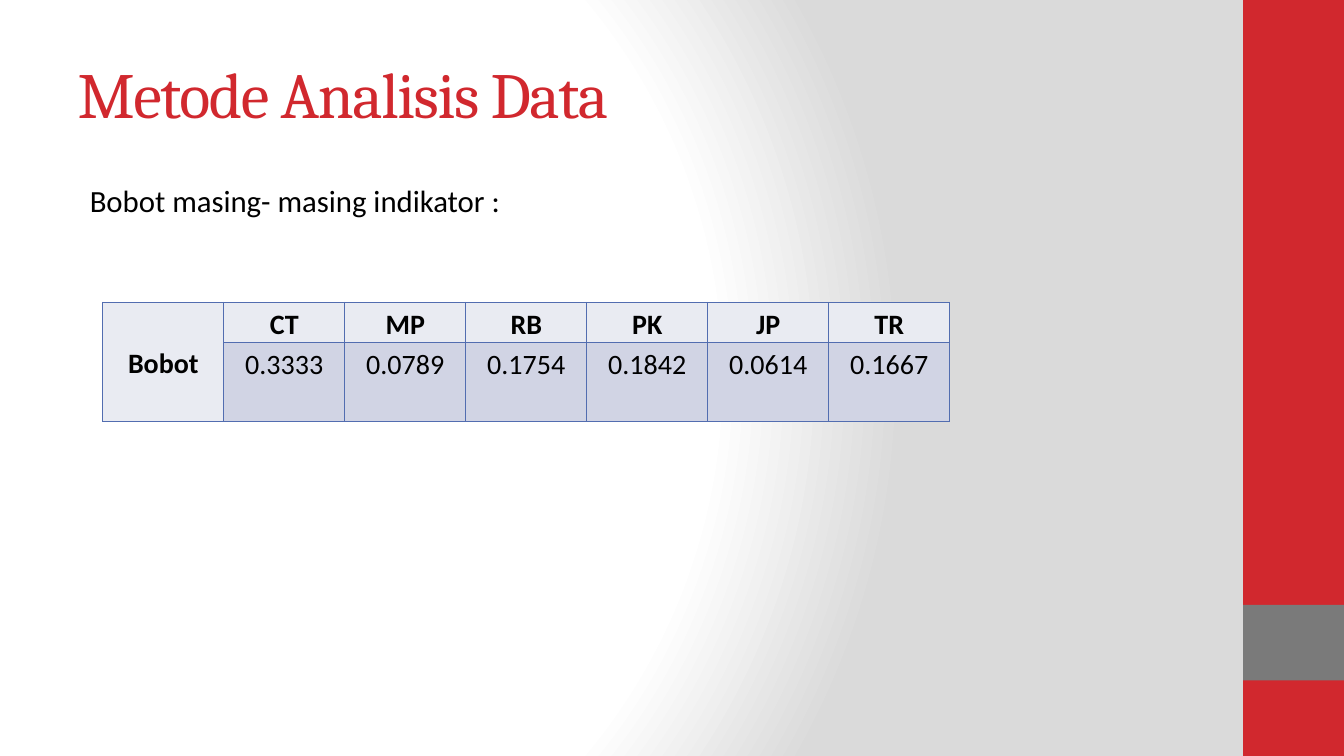
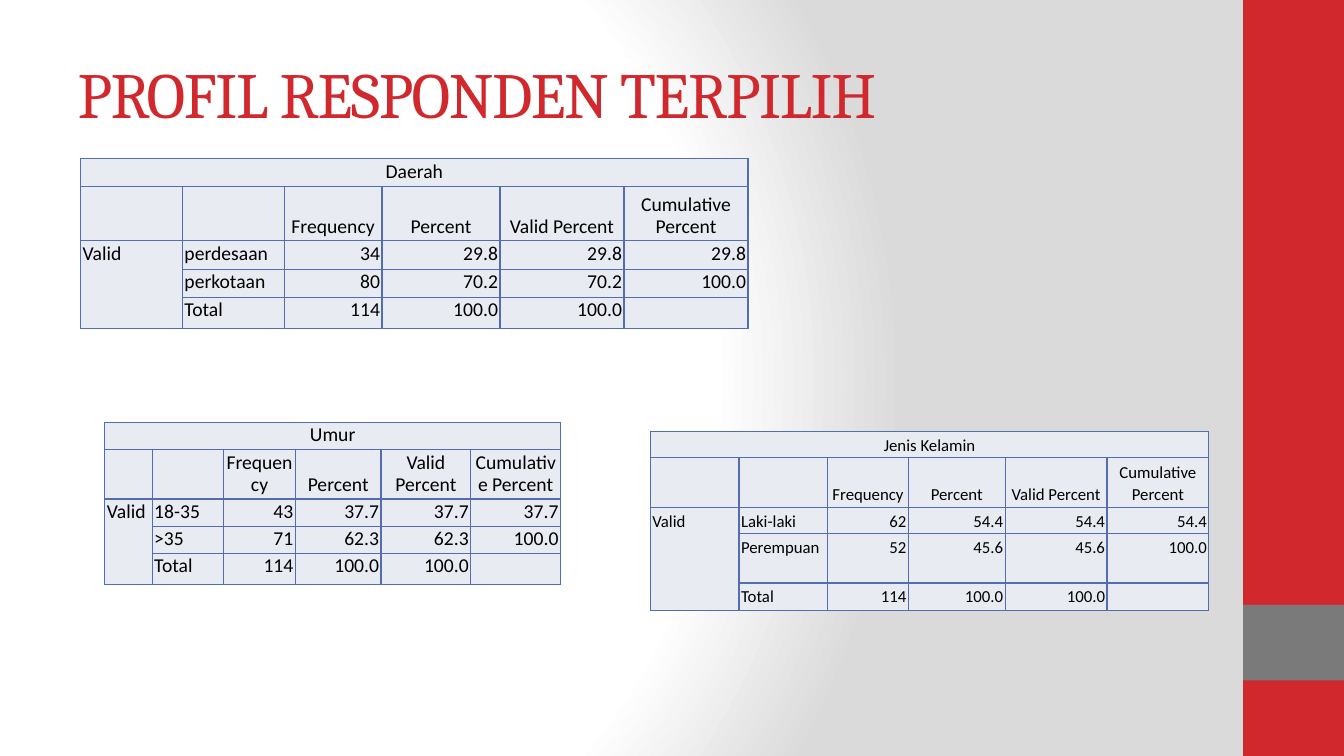
from lxml.etree import SubElement
from pptx import Presentation
from pptx.dml.color import RGBColor
from pptx.enum.shapes import MSO_SHAPE
from pptx.enum.text import MSO_ANCHOR, MSO_AUTO_SIZE, PP_ALIGN
from pptx.oxml import parse_xml
from pptx.oxml.ns import nsdecls, qn
from pptx.util import Inches, Pt

# Shared look
RED, GREY, BLACK = "D1282E", "7A7A7A", "000000"
PALE, DEEP, EDGE = "E9EBF2", "D1D4E4", "526DB0"
HEAD, BODY = "Cambria", "Calibri"
LEFT, CENTER, RIGHT = PP_ALIGN.LEFT, PP_ALIGN.CENTER, PP_ALIGN.RIGHT
TOP, MIDDLE, BOTTOM = MSO_ANCHOR.TOP, MSO_ANCHOR.MIDDLE, MSO_ANCHOR.BOTTOM
STOPS = [(0, "FFFFFF"), (75, "FFFFFF"), (100, "DADADA")]
COLUMNS = ["", "", "Frequency", "Percent", "Valid Percent", "Cumulative Percent"]


def paint(fill, color):
    fill.solid()
    fill.fore_color.rgb = RGBColor.from_string(color)


def style(para, size, font=BODY, color=BLACK, bold=False):
    for run in para.runs:
        run.font.size = Pt(size)
        run.font.name = font
        run.font.bold = bold
        run.font.color.rgb = RGBColor.from_string(color)


# Slide frame
def set_back(master):
    fill = master.background.fill
    fill.solid()
    stops = "".join(
        f'<a:gs pos="{pos * 1000}"><a:srgbClr val="{color}"/></a:gs>'
        for pos, color in STOPS)
    grad = parse_xml(
        f'<a:gradFill {nsdecls("a")} rotWithShape="1"><a:gsLst>{stops}</a:gsLst>'
        '<a:path path="circle"><a:fillToRect l="20000" t="50000" r="100000"'
        ' b="50000"/></a:path></a:gradFill>')
    solid = next(master.element.iter(qn("a:solidFill")))
    solid.getparent().replace(solid, grad)


def add_band(slide, top, height, color):
    band = slide.shapes.add_shape(
        MSO_SHAPE.RECTANGLE, Inches(12.33), Inches(top), Inches(1), Inches(height))
    band.shadow.inherit = False
    paint(band.fill, color)
    band.line.fill.background()


def add_page(deck, text):
    slide = deck.slides.add_slide(deck.slide_layouts[5])
    add_band(slide, 0, 7.5, RED)
    add_band(slide, 6, 0.75, GREY)
    title = slide.shapes.title
    title.left, title.top = Inches(0.67), Inches(0.3)
    title.width, title.height = Inches(11.11), Inches(1.25)
    frame = title.text_frame
    frame.text = text
    frame.auto_size = MSO_AUTO_SIZE.NONE
    frame.vertical_anchor = MIDDLE
    para = frame.paragraphs[0]
    para.alignment = LEFT
    style(para, 46, HEAD, RED)
    para.runs[0].font._element.set("spc", "-100")
    return slide


def add_note(slide, text):
    box = slide.shapes.add_textbox(
        Inches(0.67), Inches(1.75), Inches(11.11), Inches(0.5))
    frame = box.text_frame
    frame.word_wrap = True
    frame.margin_left = Inches(0.22)
    frame.text = text
    style(frame.paragraphs[0], 22)


# Tables
def add_edges(cell):
    props = cell._tc.get_or_add_tcPr()
    for spot, side in enumerate("LRTB"):
        props.insert(spot, parse_xml(
            f'<a:ln{side} {nsdecls("a")} w="12700"><a:solidFill>'
            f'<a:srgbClr val="{EDGE}"/></a:solidFill></a:ln{side}>'))


def fill_cell(cell, text, size, align, anchor, pad, space, color=PALE, bold=False):
    paint(cell.fill, color)
    add_edges(cell)
    cell.margin_left = cell.margin_right = Inches(pad[0])
    cell.margin_top = cell.margin_bottom = Inches(pad[1])
    cell.vertical_anchor = anchor
    para = cell.text_frame.paragraphs[0]
    para.text = text
    para.alignment = align
    para.line_spacing = space
    style(para, size, bold=bold)
    if not text:
        SubElement(para._p, qn("a:endParaRPr")).set("sz", str(size * 100))


def add_grid(slide, left, top, widths, heights):
    grid = slide.shapes.add_table(
        len(heights), len(widths), Inches(left), Inches(top),
        Inches(sum(widths)), Inches(sum(heights))).table
    grid.first_row = grid.horz_banding = False
    for col, width in zip(grid.columns, widths):
        col.width = Inches(width)
    for row, height in zip(grid.rows, heights):
        row.height = Inches(height)
    return grid


def add_weights(slide, names, values):
    grid = add_grid(slide, 1.02, 3, [1.2] * (len(names) + 1), [0.4, 0.78])
    rows = [["Bobot", *names], ["", *values]]
    for y, row in enumerate(rows):
        for x, text in enumerate(row):
            head = y == 0 or x == 0
            fill_cell(grid.cell(y, x), text, 20, CENTER, TOP if x else MIDDLE,
                      (0.07, 0), 1.15, PALE if head else DEEP, head)
    grid.cell(0, 0).merge(grid.cell(1, 0))


def add_counts(slide, name, left, top, widths, heights, size, data):
    grid = add_grid(slide, left, top, widths, heights)
    rows = [[name] + [""] * 5, COLUMNS]
    rows += [["" if y else "Valid", *row] for y, row in enumerate(data)]
    for y, row in enumerate(rows):
        anchor = (MIDDLE, BOTTOM)[y] if y < 2 else TOP
        for x, text in enumerate(row):
            align = CENTER if y < 2 else RIGHT if x > 1 else LEFT
            fill_cell(grid.cell(y, x), text, size, align, anchor,
                      (0.02, 0.02), Pt(16))
    grid.cell(0, 0).merge(grid.cell(0, 5))
    grid.cell(2, 0).merge(grid.cell(4, 0))


def main():
    deck = Presentation()
    deck.slide_width, deck.slide_height = Inches(13.33), Inches(7.5)
    set_back(deck.slide_master)

    # Indicator weights
    slide = add_page(deck, "Metode Analisis Data")
    add_note(slide, "Bobot masing- masing indikator :")
    add_weights(slide, ["CT", "MP", "RB", "PK", "JP", "TR"],
                ["0.3333", "0.0789", "0.1754", "0.1842", "0.0614", "0.1667"])

    # Respondent profile
    slide = add_page(deck, "PROFIL RESPONDEN TERPILIH")
    total = ["Total", "114", "100.0", "100.0", ""]
    add_counts(slide, "Daerah", 0.8, 1.57,
               [1.01, 1.01, 0.97, 1.17, 1.23, 1.23],
               [0.28, 0.54, 0.28, 0.28, 0.31], 14,
               [["perdesaan", "34", "29.8", "29.8", "29.8"],
                ["perkotaan", "80", "70.2", "70.2", "100.0"], total])
    add_counts(slide, "Umur", 1.04, 4.19,
               [0.47, 0.71, 0.71, 0.85, 0.89, 0.89],
               [0.27, 0.49, 0.27, 0.27, 0.31], 14,
               [["18-35", "43", "37.7", "37.7", "37.7"],
                [">35", "71", "62.3", "62.3", "100.0"], total])
    add_counts(slide, "Jenis Kelamin", 6.45, 4.28,
               [0.88, 0.88, 0.8, 0.96, 1.01, 1.01],
               [0.26, 0.49, 0.26, 0.49, 0.27], 12,
               [["Laki-laki", "62", "54.4", "54.4", "54.4"],
                ["Perempuan", "52", "45.6", "45.6", "100.0"], total])
    deck.save("out.pptx")


if __name__ == "__main__":
    main()
